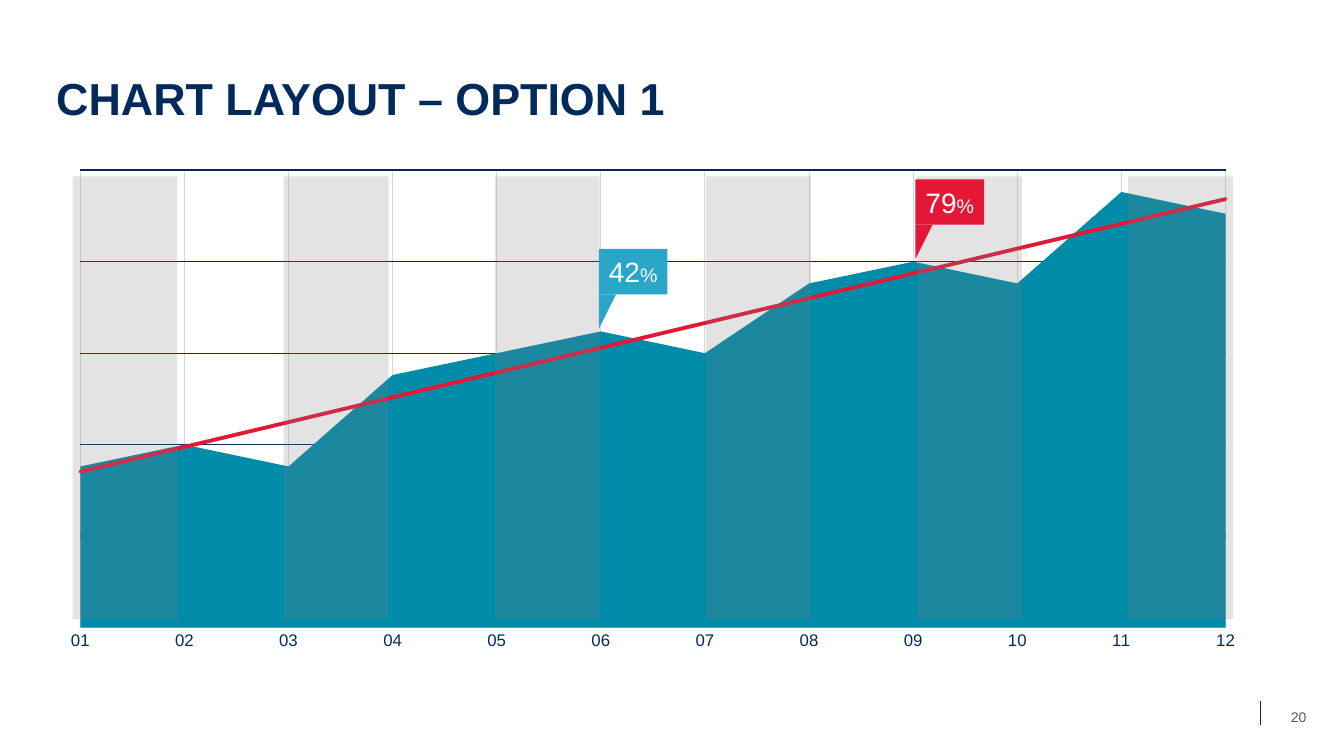
from lxml import etree
from pptx import Presentation
from pptx import util as u
from pptx.chart import data
from pptx.dml import color
from pptx.enum import chart as ch, shapes, text
from pptx.oxml import ns, parse_xml

FONT = "Arial"
COLORS = {
    "navy": "002A5C", "teal": "008BA9", "red": "E31837", "sky": "2AA6C8",
    "band": "808080", "grid": "D9D9D9", "grey": "595959", "white": "FFFFFF",
}
VALUES = (37, 42, 37, 58, 63, 68, 63, 79, 84, 79, 100, 95)
TREND = (
    f'<c:trendline {ns.nsdecls("c", "a")}><c:spPr><a:ln w="34925" cap="rnd">'
    f'<a:solidFill><a:srgbClr val="{COLORS["red"]}"/></a:solidFill></a:ln></c:spPr>'
    '<c:trendlineType val="linear"/><c:dispRSqr val="0"/><c:dispEq val="0"/></c:trendline>'
)


def rgb(name):
    """Return the named colour."""
    return color.RGBColor.from_string(COLORS[name])


def set_font(font, size, name, bold=False):
    """Apply typeface, size, colour and weight."""
    font.name, font.size, font.bold = FONT, u.Pt(size), bold
    font.color.rgb = rgb(name)


def set_line(line, name, width):
    """Colour a line and set its width in points."""
    line.color.rgb = rgb(name)
    line.width = u.Pt(width)


def add_label(s, box, words, size, name, anchor, align, bold=False):
    """Add a one-paragraph text box."""
    tf = s.shapes.add_textbox(*map(u.Inches, box)).text_frame
    tf.word_wrap, tf.vertical_anchor = True, anchor
    p = tf.paragraphs[0]
    p.text, p.alignment = words, align
    set_font(p.runs[0].font, size, name, bold)
    return p


def add_block(group, kind, box, name):
    """Add a filled shape without outline to a group."""
    sp = group.shapes.add_shape(kind, *map(u.Inches, box))
    sp.shadow.inherit = False
    sp.fill.solid()
    sp.fill.fore_color.rgb = rgb(name)
    sp.line.fill.background()
    return sp


def add_plot_layout(chart, x, y, w, h):
    """Fix the inner plot area as fractions of the chart."""
    old = chart._chartSpace.chart.plotArea.find(ns.qn("c:layout"))
    if old is not None:
        old.getparent().remove(old)
    layout = etree.Element(ns.qn("c:layout"))
    manual = etree.SubElement(layout, ns.qn("c:manualLayout"))
    settings = dict(layoutTarget="inner", xMode="edge", yMode="edge", x=x, y=y, w=w, h=h)
    for tag, value in settings.items():
        etree.SubElement(manual, ns.qn(f"c:{tag}")).set("val", str(value))
    chart._chartSpace.chart.plotArea.insert(0, layout)


def add_area_chart(s, box):
    """Add the monthly area chart with its trend line."""
    cd = data.CategoryChartData()
    cd.categories = [f"{month:02}" for month in range(1, 13)]
    cd.add_series("Series 1", VALUES)
    chart = s.shapes.add_chart(ch.XL_CHART_TYPE.AREA, *map(u.Inches, box), cd).chart
    chart.has_legend = chart.has_title = False
    chart.font.name, chart.font.size = FONT, u.Pt(10)
    plot = chart.plots[0]
    plot.vary_by_categories = False
    series = plot.series[0]
    series.format.fill.solid()
    series.format.fill.fore_color.rgb = rgb("teal")
    series._element.find(ns.qn("c:cat")).addprevious(parse_xml(TREND))

    months = chart.category_axis
    months.major_tick_mark = months.minor_tick_mark = ch.XL_TICK_MARK.NONE
    months.has_major_gridlines = True
    set_font(months.tick_labels.font, 12, "navy")
    set_line(months.format.line, "grid", 0.75)
    set_line(months.major_gridlines.format.line, "grid", 0.75)

    values = chart.value_axis
    values.minimum_scale, values.maximum_scale, values.major_unit = 0, 105, 21
    values.has_major_gridlines = True
    values.visible = False
    set_line(values.major_gridlines.format.line, "navy", 1)
    values._element.find(ns.qn("c:crossBetween")).set("val", "midCat")
    add_plot_layout(chart, 0.028, 0.02, 0.945, 0.917)


def add_bands(s, box, count=6, width=1.04):
    """Spread translucent bands evenly across the box."""
    left, top, total, height = box
    step = (total - width) / (count - 1)
    group = s.shapes.add_group_shape()
    for i in range(count):
        band = (left + i * step, top, width, height)
        sp = add_block(group, shapes.MSO_SHAPE.RECTANGLE, band, "band")
        tint = sp._element.spPr.find(".//" + ns.qn("a:srgbClr"))
        etree.SubElement(tint, ns.qn("a:alpha")).set("val", "22000")


def add_callout(s, box, number, name):
    """Add a percentage flag with a pointer below its left edge."""
    left, top, width, height = box
    group = s.shapes.add_group_shape()
    flag = add_block(group, shapes.MSO_SHAPE.RECTANGLE, box, name)
    tf = flag.text_frame
    tf.margin_left = tf.margin_right = tf.margin_top = tf.margin_bottom = 0
    tf.vertical_anchor = text.MSO_ANCHOR.MIDDLE
    p = tf.paragraphs[0]
    p.alignment = text.PP_ALIGN.CENTER
    for words, size in ((number, 20), ("%", 14)):
        r = p.add_run()
        r.text = words
        set_font(r.font, size, "white")
    tip = (left, top + height, width / 4, 0.34)
    pointer = add_block(group, shapes.MSO_SHAPE.RIGHT_TRIANGLE, tip, name)
    pointer._element.spPr.find(ns.qn("a:xfrm")).set("flipV", "1")


def add_footer(s, box):
    """Add the page number and the rule to its left."""
    left, top, width, height = box
    x = u.Inches(left)
    rule = s.shapes.add_connector(
        shapes.MSO_CONNECTOR.STRAIGHT, x, u.Inches(top + 0.04), x, u.Inches(top + 0.28))
    set_line(rule.line, "navy", 0.5)
    etree.SubElement(rule._element.spPr, ns.qn("a:effectLst"))
    add_label(s, (left + 0.14, top, width - 0.14, height), "20", 10, "grey",
              text.MSO_ANCHOR.MIDDLE, text.PP_ALIGN.CENTER)


def main():
    """Build and save the slide."""
    prs = Presentation()
    prs.slide_width, prs.slide_height = u.Inches(13.33), u.Inches(7.5)
    s = prs.slides.add_slide(prs.slide_layouts[6])
    title = add_label(s, (0.46, 0.33, 10.4, 0.96), "CHART LAYOUT – OPTION 1", 32, "navy",
                      text.MSO_ANCHOR.BOTTOM, text.PP_ALIGN.LEFT, True)
    title.line_spacing = 0.9
    add_area_chart(s, (0.46, 1.59, 12.02, 4.95))
    add_footer(s, (12.5, 6.91, 0.62, 0.4))
    add_bands(s, (0.72, 1.75, 11.51, 4.39))
    add_callout(s, (9.08, 1.78, 0.68, 0.45), "79", "red")
    add_callout(s, (5.94, 2.47, 0.68, 0.45), "42", "sky")
    prs.save("out.pptx")


if __name__ == "__main__":
    main()
